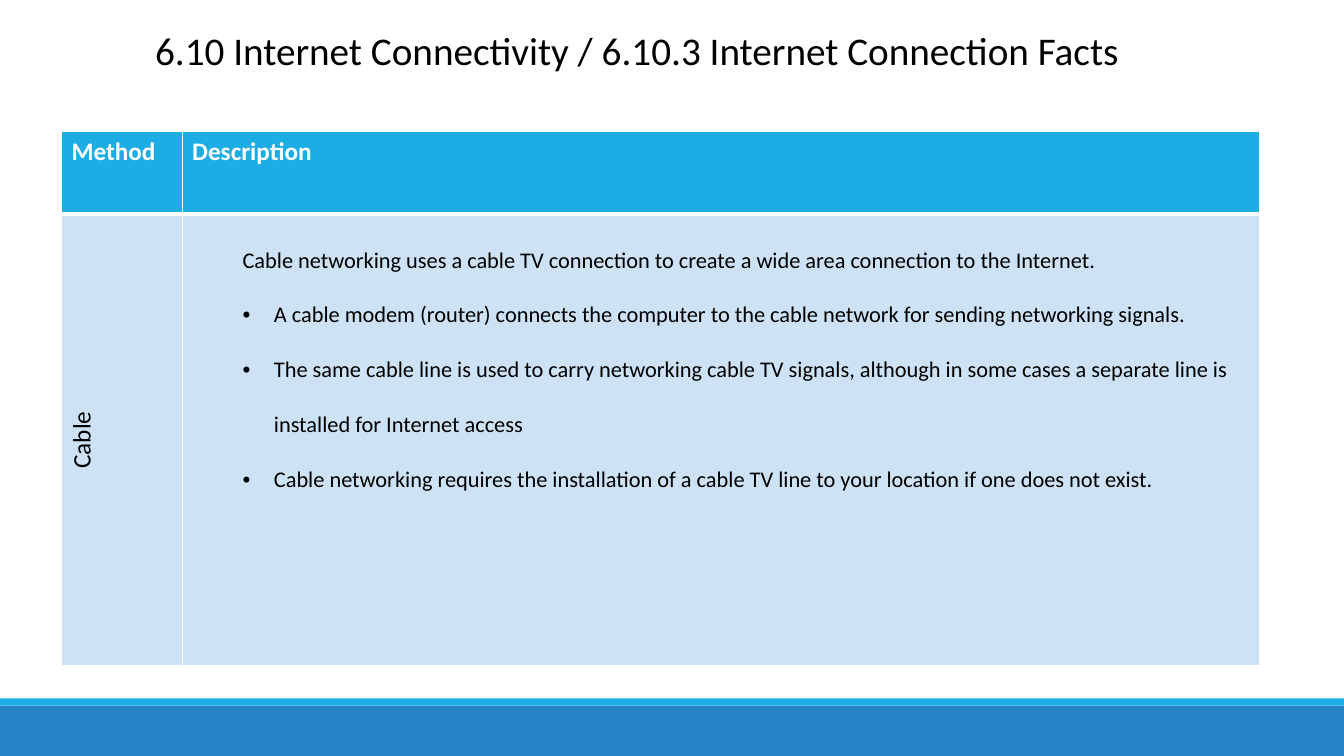
from lxml.etree import SubElement as Sub
from pptx import Presentation
from pptx.dml.color import RGBColor as RGB
from pptx.enum.shapes import MSO_SHAPE as Shape
from pptx.enum.text import MSO_ANCHOR as Anchor, PP_ALIGN as Align
from pptx.oxml.ns import qn
from pptx.util import Cm, Pt

WHITE = RGB(0xFF, 0xFF, 0xFF)
BLACK = RGB(0, 0, 0)
CYAN = RGB(0x1C, 0xAD, 0xE4)
BLUE = RGB(0x26, 0x83, 0xC6)
PALE = RGB(0xCD, 0xE3, 0xF5)

WIDE, HIGH = Cm(33.87), Cm(19.05)
TITLE = "6.10 Internet Connectivity / 6.10.3 Internet Connection Facts"
HEADS = ["Method", "Description"]
METHOD = "Cable"
INTRO = "Cable networking uses a cable TV connection to create a wide area connection to the Internet."
FACTS = [
    "A cable modem (router) connects the computer to the cable network for sending networking signals.",
    "The same cable line is used to carry networking cable TV signals, although in some cases a separate line is installed for Internet access",
    "Cable networking requires the installation of a cable TV line to your location if one does not exist.",
]


def write(para, text, size, color=BLACK, bold=False):
    para.add_run().text = text
    font = para.font
    font.name, font.size, font.bold = "Calibri", Pt(size), bold
    font.color.rgb = color


def indent(para, left, hang=0, mark=None):
    para.level = 1
    para.line_spacing = 2.0
    props = para._p.get_or_add_pPr()
    props.set("marL", str(Cm(left)))
    props.set("indent", str(-Cm(hang)))
    if mark:
        Sub(props, qn("a:buFont"), typeface="Arial")
        Sub(props, qn("a:buChar"), char=mark)
    else:
        Sub(props, qn("a:buNone"))


def paint(cell, color, top=1, base=1):
    props = cell._tc.get_or_add_tcPr()
    for side, width in zip("LRTB", (1, 1, top, base)):
        line = Sub(props, qn("a:ln" + side), w=str(Pt(width)))
        fill = Sub(line, qn("a:solidFill"))
        Sub(fill, qn("a:srgbClr"), val=str(WHITE))
    cell.fill.solid()
    cell.fill.fore_color.rgb = color


def add_foot(slide, left, top, width, height):
    strip = Cm(0.18)
    bands = [(top + strip, height - strip, BLUE), (top, strip, CYAN)]
    for y, tall, color in bands:
        band = slide.shapes.add_shape(Shape.RECTANGLE, left, y, width, tall)
        band.shadow.inherit = False
        band.fill.solid()
        band.fill.fore_color.rgb = color
        band.line.fill.background()


def add_title(slide, left, top, width, height):
    frame = slide.shapes.add_textbox(left, top, width, height).text_frame
    frame.word_wrap = True
    para = frame.paragraphs[0]
    para.alignment = Align.CENTER
    write(para, TITLE, 28)


def add_facts(slide, left, top, width, height):
    table = slide.shapes.add_table(2, 2, left, top, width, height).table
    side, head = Cm(3.04), Cm(2.1)
    table.columns[0].width, table.columns[1].width = side, width - side
    table.rows[0].height, table.rows[1].height = head, height - head

    for col, text in enumerate(HEADS):
        cell = table.cell(0, col)
        paint(cell, CYAN, base=3)
        write(cell.text_frame.paragraphs[0], text, 18, WHITE, True)

    name, body = table.cell(1, 0), table.cell(1, 1)
    for cell in (name, body):
        paint(cell, PALE, top=3)

    name.vertical_anchor = Anchor.MIDDLE
    name._tc.get_or_add_tcPr().set("vert", "vert270")
    para = name.text_frame.paragraphs[0]
    para.alignment = Align.CENTER
    write(para, METHOD, 18)

    frame = body.text_frame
    para = frame.paragraphs[0]
    indent(para, 1.27)
    write(para, INTRO, 16)
    for fact in FACTS:
        para = frame.add_paragraph()
        indent(para, 2.06, 0.79, "•")
        write(para, fact, 16)


def main():
    deck = Presentation()
    deck.slide_width, deck.slide_height = WIDE, HIGH
    slide = deck.slides.add_slide(deck.slide_layouts[6])
    foot = Cm(1.45)
    add_foot(slide, 0, HIGH - foot, WIDE, foot)
    add_title(slide, Cm(1.55), Cm(0.53), Cm(29), Cm(1.45))
    add_facts(slide, Cm(1.55), Cm(3.3), Cm(30.2), Cm(13.48))
    deck.save("out.pptx")


if __name__ == "__main__":
    main()
